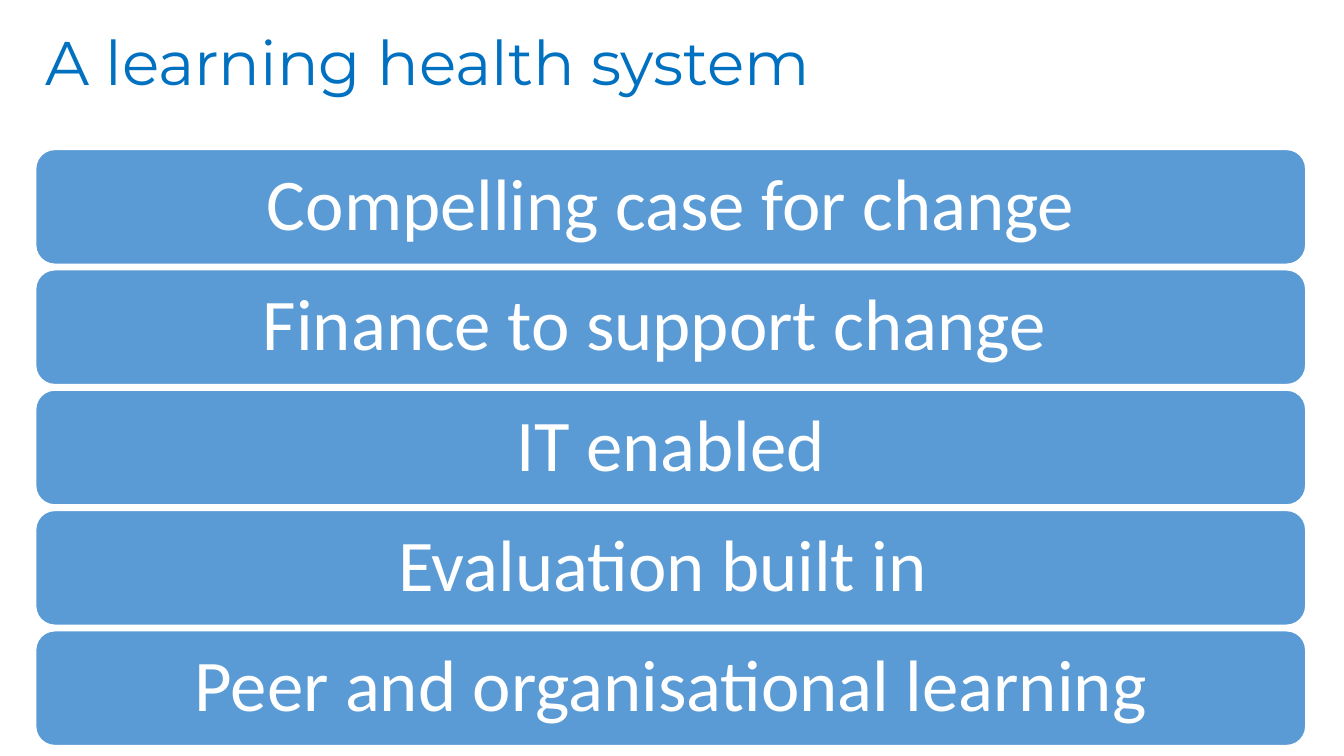
from pptx import Presentation
from pptx.dml.color import RGBColor
from pptx.enum.shapes import MSO_SHAPE
from pptx.enum.text import MSO_ANCHOR, PP_ALIGN
from pptx.util import Pt

COLOURS = {"title": "0070C0", "bar": "5B9BD5", "white": "FFFFFF"}
SPACE_WIDTH = 11.75
PRINCIPLES = [
    ("Compelling case for change", 0),
    ("Finance to support change", 2 * SPACE_WIDTH),
    ("IT enabled", 0),
    ("Evaluation built in", SPACE_WIDTH),
    ("Peer and organisational learning", 0),
]
BAR_LEFT, BAR_TOP, BAR_WIDTH, BAR_HEIGHT, BAR_PITCH = 25.5, 106.75, 907.2, 82, 85.95


class SlideBuilder:
    def __init__(self, page):
        self.page = page

    def colour(self, name):
        return RGBColor.from_string(COLOURS[name])

    def set_text(self, shape, text, font, size, colour, align, insets):
        frame = shape.text_frame
        frame.word_wrap = True
        frame.vertical_anchor = MSO_ANCHOR.MIDDLE
        frame.margin_left, frame.margin_top, frame.margin_right, frame.margin_bottom = map(Pt, insets)
        para = frame.paragraphs[0]
        para.text = text
        para.alignment = align
        para.line_spacing = 0.9
        para.font.name = font
        para.font.size = Pt(size)
        para.font.color.rgb = self.colour(colour)

    def title(self, text, left, top, width, height):
        box = self.page.shapes.add_textbox(Pt(left), Pt(top), Pt(width), Pt(height))
        self.set_text(box, text, "Montserrat", 44, "title", PP_ALIGN.LEFT, (7.2, 3.6, 7.2, 3.6))

    def bar(self, text, left, top, width, height, right_shift):
        bar = self.page.shapes.add_shape(
            MSO_SHAPE.ROUNDED_RECTANGLE, Pt(left), Pt(top), Pt(width), Pt(height))
        bar.shadow.inherit = False
        bar.fill.solid()
        bar.fill.fore_color.rgb = self.colour("bar")
        bar.line.color.rgb = self.colour("white")
        bar.line.width = Pt(1)
        self.set_text(bar, text, "Calibri", 52, "white", PP_ALIGN.CENTER,
                      (20, 8, 20 + right_shift, 8))


def main():
    deck = Presentation()
    deck.slide_width, deck.slide_height = Pt(960), Pt(540)
    builder = SlideBuilder(deck.slides.add_slide(deck.slide_layouts[6]))
    builder.title("A learning health system", 25.2, 24.5, 909.4, 44)
    for row, (text, right_shift) in enumerate(PRINCIPLES):
        builder.bar(text, BAR_LEFT, BAR_TOP + row * BAR_PITCH, BAR_WIDTH, BAR_HEIGHT, right_shift)
    deck.save("out.pptx")


if __name__ == "__main__":
    main()
